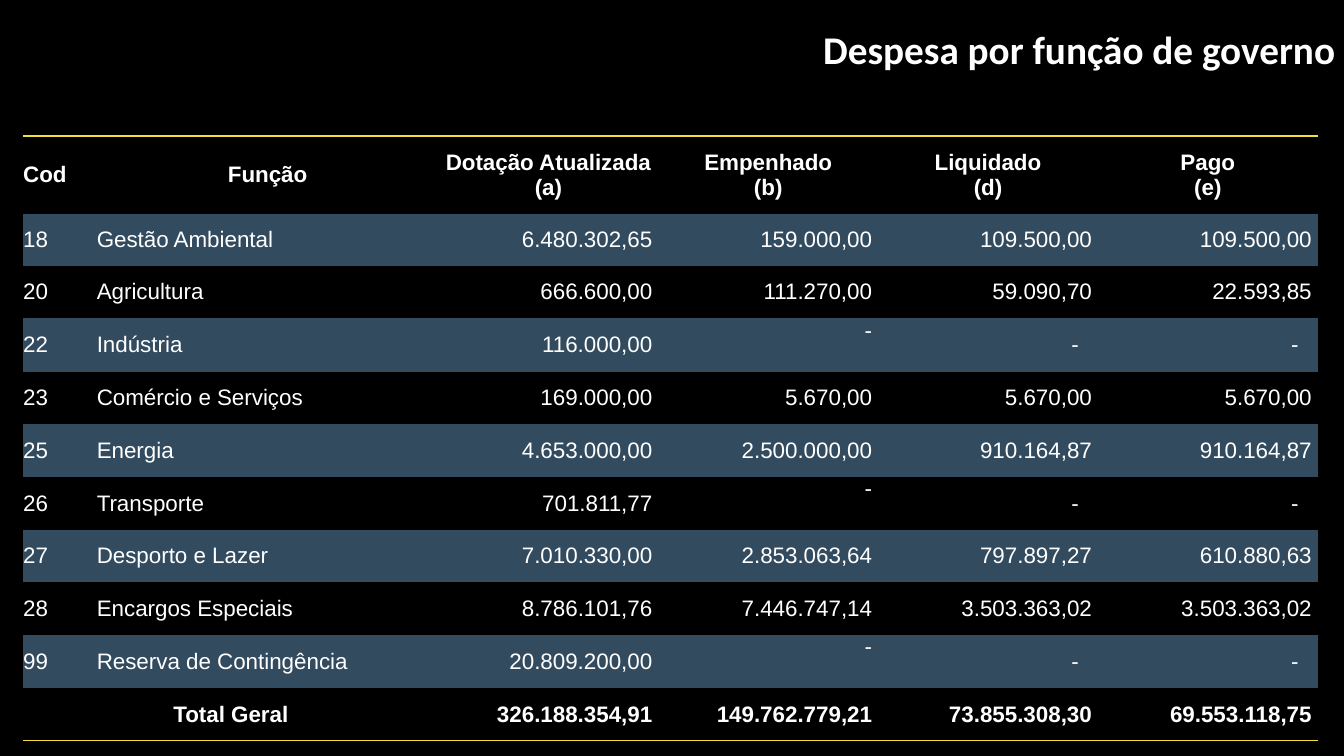
from lxml import etree
from pptx import Presentation
from pptx.dml.color import RGBColor
from pptx.enum.text import MSO_ANCHOR, MSO_AUTO_SIZE, PP_ALIGN
from pptx.oxml.ns import qn
from pptx.util import Inches, Pt

LEFT, CENTER, RIGHT = PP_ALIGN.LEFT, PP_ALIGN.CENTER, PP_ALIGN.RIGHT
TOP, MIDDLE = MSO_ANCHOR.TOP, MSO_ANCHOR.MIDDLE
FIT_SHAPE = MSO_AUTO_SIZE.SHAPE_TO_FIT_TEXT

SLIDE_WIDTH, SLIDE_HEIGHT = 13.33, 7.5
BLACK, WHITE, BAND, RULE = "000000", "FFFFFF", "324B5F", "F4DE3A"
PLAIN_TABLE_STYLE = "{2D5ABB26-0587-4C30-8999-92F81FD0307C}"

COLUMN_WIDTHS = [0.73, 3.39] + [2.18] * 4
HEADER_HEIGHT, ROW_HEIGHT, DASH_ROW_HEIGHT = 0.77, 0.52, 0.53
AMOUNT_MARGIN, DASH_MARGIN = 0.06, 0.19
FIRST_AMOUNT, COMMITTED = 2, 3

HEADER = ["Cod", "Função", "Dotação Atualizada\n(a)", "Empenhado\n(b)",
          "Liquidado\n(d)", "Pago\n(e)"]
EXPENSES = [
    ["18", "Gestão Ambiental", "6.480.302,65", "159.000,00", "109.500,00", "109.500,00"],
    ["20", "Agricultura", "666.600,00", "111.270,00", "59.090,70", "22.593,85"],
    ["22", "Indústria", "116.000,00", "-", "-", "-"],
    ["23", "Comércio e Serviços", "169.000,00", "5.670,00", "5.670,00", "5.670,00"],
    ["25", "Energia", "4.653.000,00", "2.500.000,00", "910.164,87", "910.164,87"],
    ["26", "Transporte", "701.811,77", "-", "-", "-"],
    ["27", "Desporto e Lazer", "7.010.330,00", "2.853.063,64", "797.897,27", "610.880,63"],
    ["28", "Encargos Especiais", "8.786.101,76", "7.446.747,14", "3.503.363,02", "3.503.363,02"],
    ["99", "Reserva de Contingência", "20.809.200,00", "-", "-", "-"],
]
TOTAL = ["Total Geral", "", "326.188.354,91", "149.762.779,21", "73.855.308,30",
         "69.553.118,75"]


def color(value):
    return RGBColor.from_string(value)


def write_text(frame, text, size=16, font="Arial", bold=False, align=LEFT):
    frame.text = text
    for paragraph in frame.paragraphs:
        paragraph.alignment = align
        paragraph.font.size = Pt(size)
        paragraph.font.name = font
        paragraph.font.bold = bold
        paragraph.font.color.rgb = color(WHITE)


def add_border(cell, side):
    """Draw a rule on one side of a cell: lnT or lnB."""
    line = etree.Element(qn("a:" + side), w=str(Pt(1)))
    fill = etree.SubElement(line, qn("a:solidFill"))
    etree.SubElement(fill, qn("a:srgbClr"), val=RULE)
    cell._tc.get_or_add_tcPr().insert(0, line)


def add_title(slide, text, left, top, width, height):
    title = slide.shapes.title
    title.left, title.top = Inches(left), Inches(top)
    title.width, title.height = Inches(width), Inches(height)
    frame = title.text_frame
    frame.word_wrap = True
    frame.auto_size = FIT_SHAPE
    frame.vertical_anchor = TOP
    write_text(frame, text, size=28, font="Calibri", bold=True, align=RIGHT)


def format_cell(cell, text, column, is_header, is_total, banded):
    is_amount = column >= FIRST_AMOUNT and not is_header
    # Dashes of the committed column sit at the top right of their cells
    raised = text == "-" and column == COMMITTED
    cell.vertical_anchor = TOP if raised else MIDDLE
    cell.margin_left = cell.margin_top = cell.margin_bottom = 0
    margin = DASH_MARGIN if text == "-" and not raised else AMOUNT_MARGIN
    cell.margin_right = Inches(margin) if is_amount else 0
    if is_amount:
        align = RIGHT
    elif is_total or (is_header and column):
        align = CENTER
    else:
        align = LEFT
    if text:
        write_text(cell.text_frame, text, bold=is_header or is_total, align=align)
    if banded:
        cell.fill.solid()
        cell.fill.fore_color.rgb = color(BAND)
    else:
        cell.fill.background()
    if is_header:
        add_border(cell, "lnT")
    if is_total:
        add_border(cell, "lnB")


def add_expense_table(slide, left, top):
    rows = [HEADER, *EXPENSES, TOTAL]
    heights = [HEADER_HEIGHT] + [DASH_ROW_HEIGHT if "-" in row else ROW_HEIGHT
                                 for row in rows[1:]]
    shape = slide.shapes.add_table(len(rows), len(HEADER), Inches(left), Inches(top),
                                   Inches(sum(COLUMN_WIDTHS)), Inches(sum(heights)))
    for style in shape.element.iter(qn("a:tableStyleId")):
        style.text = PLAIN_TABLE_STYLE
    table = shape.table
    table.horz_banding = False
    for column, width in zip(table.columns, COLUMN_WIDTHS):
        column.width = Inches(width)

    last = len(rows) - 1
    table.cell(last, 0).merge(table.cell(last, 1))
    for index, values in enumerate(rows):
        table.rows[index].height = Inches(heights[index])
        for column, text in enumerate(values):
            format_cell(table.cell(index, column), text, column,
                        index == 0, index == last, index % 2 == 1)


def main():
    presentation = Presentation()
    presentation.slide_width = Inches(SLIDE_WIDTH)
    presentation.slide_height = Inches(SLIDE_HEIGHT)
    slide = presentation.slides.add_slide(presentation.slide_layouts.get_by_name("Title Only"))
    slide.background.fill.solid()
    slide.background.fill.fore_color.rgb = color(BLACK)
    add_title(slide, "Despesa por função de governo", 4.91, 0.2, 8.43, 0.57)
    add_expense_table(slide, 0.23, 1.35)
    presentation.save("out.pptx")


if __name__ == "__main__":
    main()
